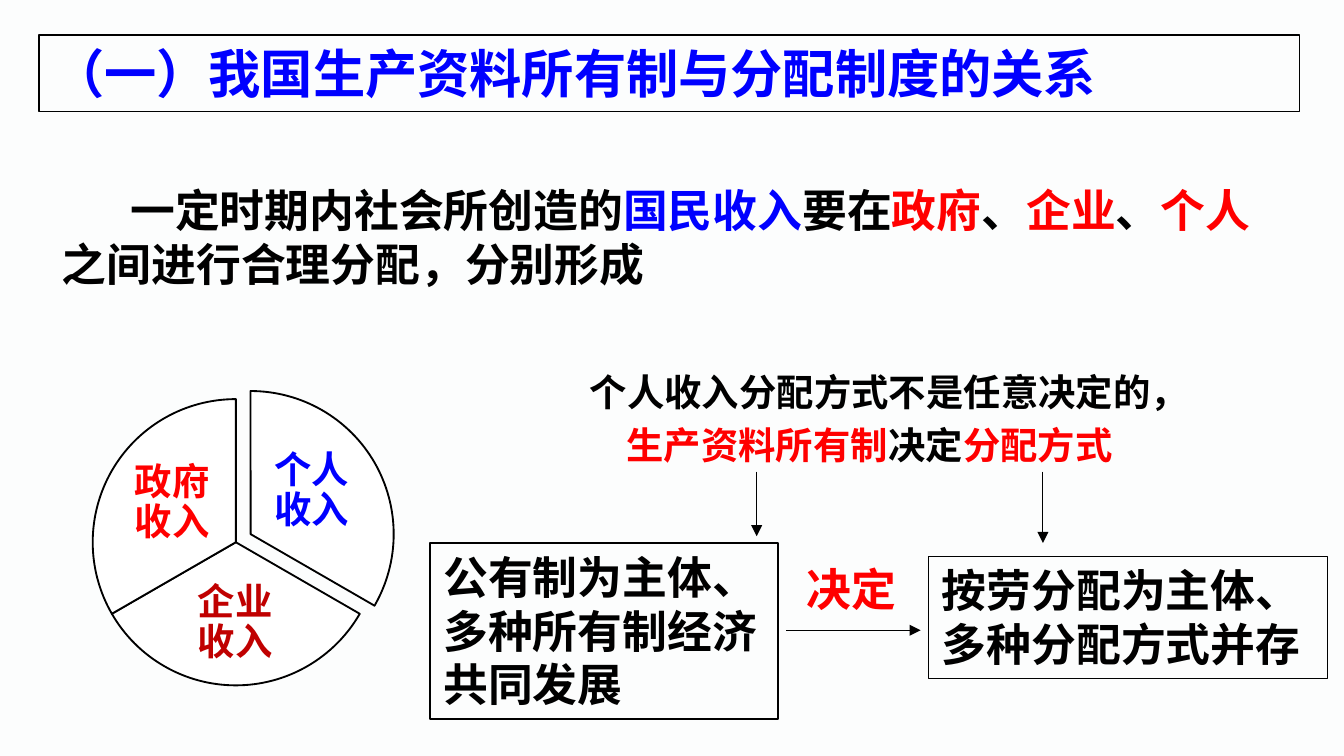
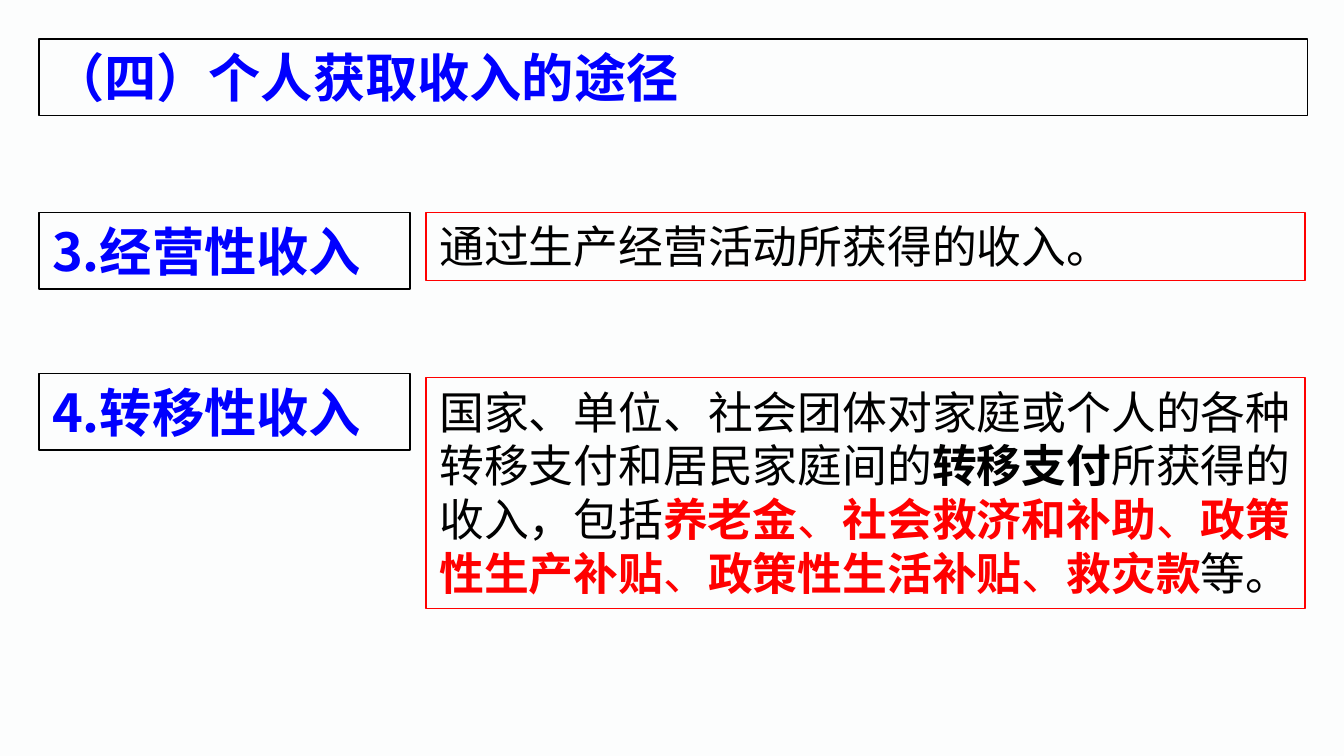
"""Build two slides on income distribution and the ways individuals earn income."""
from dataclasses import dataclass

from lxml.etree import SubElement
from pptx import Presentation
from pptx.dml.color import RGBColor
from pptx.enum.shapes import MSO_CONNECTOR, MSO_SHAPE
from pptx.enum.text import MSO_ANCHOR, MSO_AUTO_SIZE, PP_ALIGN
from pptx.oxml.ns import qn
from pptx.util import Inches, Pt


@dataclass(frozen=True)
class Theme:
    paper: RGBColor = RGBColor.from_string("FCFDFD")
    white: RGBColor = RGBColor.from_string("FFFFFF")
    black: RGBColor = RGBColor.from_string("000000")
    blue: RGBColor = RGBColor.from_string("0000FF")
    red: RGBColor = RGBColor.from_string("FF0000")
    crimson: RGBColor = RGBColor.from_string("C00000")
    title_font: str = "Arial"
    font: str = "Noto Sans CJK SC"
    heading: Pt = Pt(28)
    body: Pt = Pt(24)
    small: Pt = Pt(20)
    border: Pt = Pt(0.75)
    slice_line: Pt = Pt(1)
    arrow_line: Pt = Pt(0.5)


theme = Theme()
TIGHT = (0.07, 0.04)


def add_text(slide, place, runs, size, outline=None, inset=(0.1, 0.05), font=theme.font,
             frame_format=None, paragraph_format=None):
    place = [Inches(length) for length in place]
    if outline is None:
        panel = slide.shapes.add_textbox(*place)
    else:
        panel = slide.shapes.add_shape(MSO_SHAPE.RECTANGLE, *place)
        panel.shadow.inherit = False
        panel.fill.background()
        panel.line.color.rgb = outline
        panel.line.width = theme.border
    frame = panel.text_frame
    across, down = (Inches(length) for length in inset)
    frame_values = {"word_wrap": True, "auto_size": MSO_AUTO_SIZE.SHAPE_TO_FIT_TEXT,
                    "vertical_anchor": MSO_ANCHOR.TOP, "margin_left": across,
                    "margin_right": across, "margin_top": down, "margin_bottom": down}
    for key, value in (frame_values | (frame_format or {})).items():
        setattr(frame, key, value)
    paragraph = frame.paragraphs[0]
    for key, value in ({"alignment": PP_ALIGN.LEFT} | (paragraph_format or {})).items():
        setattr(paragraph, key, value)
    for words, color, bold in runs:
        run = paragraph.add_run()
        run.text = words
        for key, value in {"name": font, "size": size, "bold": bold}.items():
            setattr(run.font, key, value)
        run.font.color.rgb = color
        SubElement(run.font._element, qn("a:ea"), typeface=theme.font)
    return paragraph


def add_arrow(slide, start, end):
    arrow = slide.shapes.add_connector(
        MSO_CONNECTOR.STRAIGHT, *[Inches(length) for length in start + end])
    arrow.line.color.rgb = theme.black
    arrow.line.width = theme.arrow_line
    SubElement(arrow.line._get_or_add_ln(), qn("a:tailEnd"), type="triangle")
    SubElement(arrow._element.spPr, qn("a:effectLst"))


deck = Presentation()
deck.slide_width = Inches(10)
deck.slide_height = deck.slide_width * 9 // 16

titles = [
    ((0.29, 0.26, 9.38, 0.57), "（一）我国生产资料所有制与分配制度的关系"),
    ((0.29, 0.29, 9.44, 0.57), "（四）个人获取收入的途径"),
]
pages = []
for place, title in titles:
    page = deck.slides.add_slide(deck.slide_layouts[6])
    page.background.fill.solid()
    page.background.fill.fore_color.rgb = theme.paper
    add_text(page, place, [(title, theme.blue, True)], theme.heading, theme.black,
             font=theme.title_font)
    pages.append(page)
relation, sources = pages

income_shares = [
    ("个人收入", theme.blue, (0.8, 2.91), (162, 18), (1.96, 3.3, 0.72, 0.71), 0.03),
    ("企业 收入", theme.crimson, (0.69, 2.97), (18, 90), (1.27, 4.31, 0.96, 0.66), 0.15),
    ("政府收入", theme.red, (0.69, 2.97), (90, 162), (0.92, 3.39, 0.72, 0.71), 0.03),
]
for share, color, corner, angles, label_place, side_inset in income_shares:
    wedge = relation.shapes.add_shape(
        MSO_SHAPE.PIE, *[Inches(length) for length in corner + (2.13, 2.13)])
    wedge.shadow.inherit = False
    wedge.fill.solid()
    wedge.fill.fore_color.rgb = theme.white
    wedge.line.color.rgb = theme.black
    wedge.line.width = theme.slice_line
    for index, angle in enumerate(angles):
        wedge.adjustments[index] = angle
    add_text(relation, label_place, [(share, color, True)], theme.small,
             inset=(side_inset, 0.03),
             frame_format={"vertical_anchor": MSO_ANCHOR.MIDDLE,
                           "auto_size": MSO_AUTO_SIZE.NONE},
             paragraph_format={"alignment": PP_ALIGN.CENTER, "line_spacing": 0.9})

statement = add_text(relation, (0.39, 1.32, 9.21, 0.88), [
    ("一定时期内社会所创造的", theme.black, True),
    ("国民收入", theme.blue, True),
    ("要在", theme.black, True),
    ("政府", theme.red, True),
    ("、", theme.black, True),
    ("企业", theme.red, True),
    ("、", theme.black, True),
    ("个人", theme.red, True),
    ("之间进行合理分配，分别形成", theme.black, True),
], theme.body, inset=TIGHT)
statement._p.get_or_add_pPr().set("indent", str(Inches(0.51)))

add_text(relation, (4.59, 3.1, 3.82, 0.41), [
    ("生产资料所有制", theme.red, True),
    ("决定", theme.black, True),
    ("分配方式", theme.red, True),
], theme.small, inset=TIGHT, frame_format={"word_wrap": False})

systems = [
    ((3.2, 4.04, 2.59, 1.31), "公有制为主体、多种所有制经济共同发展"),
    ((6.91, 4.14, 2.97, 0.91), "按劳分配为主体、多种分配方式并存"),
]
for place, system in systems:
    add_text(relation, place, [(system, theme.black, True)], theme.body, theme.black)
add_text(relation, (5.93, 4.14, 0.92, 0.48), [("决定", theme.red, True)], theme.body,
         inset=TIGHT)
add_text(relation, (4.29, 2.7, 4.69, 0.44),
         [("个人收入分配方式不是任意决定的，", theme.black, True)], theme.small,
         frame_format={"word_wrap": False})

for start, end in [((5.63, 3.51), (5.63, 3.99)), ((5.85, 4.69), (6.85, 4.69)),
                   ((7.76, 3.51), (7.76, 4.04))]:
    add_arrow(relation, start, end)

transfer_runs = [
    ("国家、单位、社会团体对家庭或个人的各种转移支付和居民家庭间的", theme.black, False),
    ("转移支付", theme.black, True),
    ("所获得的收入，包括", theme.black, False),
    ("养老金", theme.red, True),
]
for benefit in ("社会救济和补助", "政策性生产补贴", "政策性生活补贴", "救灾款"):
    transfer_runs += [("、", theme.red, False), (benefit, theme.red, True)]
transfer_runs.append(("等。", theme.black, False))

income_sources = [
    ("3.经营性收入", 1.58, 1.58, 0.51,
     [("通过生产经营活动所获得的收入。", theme.black, False)]),
    ("4.转移性收入", 2.78, 2.81, 1.72, transfer_runs),
]
for source, source_top, meaning_top, meaning_height, meaning in income_sources:
    add_text(sources, (0.29, source_top, 2.76, 0.57), [(source, theme.blue, True)],
             theme.heading, theme.black)
    add_text(sources, (3.17, meaning_top, 6.54, meaning_height), meaning,
             theme.body, theme.red)

deck.save("out.pptx")
